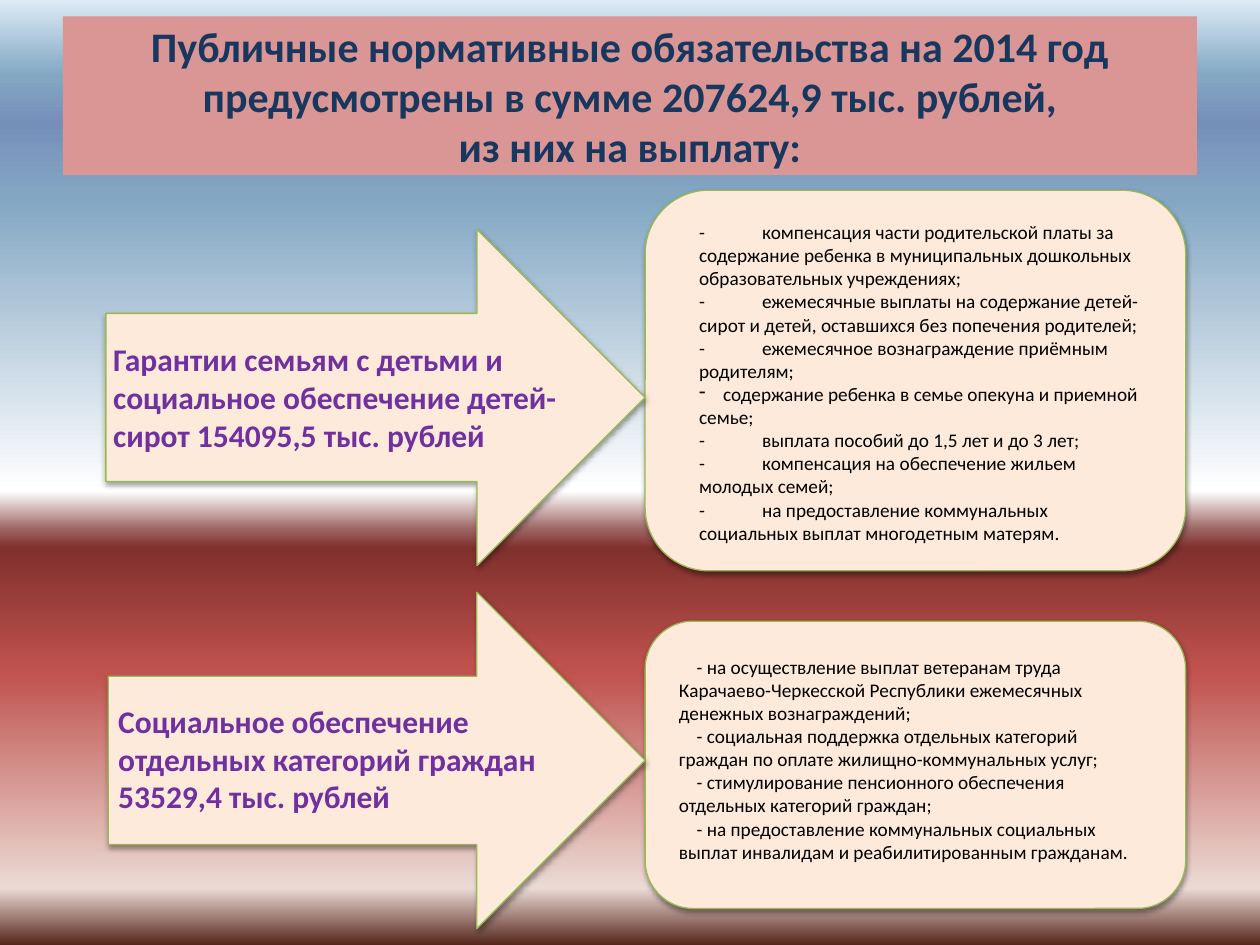
from lxml import etree
from pptx import Presentation
from pptx.dml.color import RGBColor
from pptx.enum.shapes import MSO_SHAPE
from pptx.enum.text import MSO_ANCHOR, PP_ALIGN
from pptx.oxml.ns import qn
from pptx.util import Inches, Pt

RECTANGLE = MSO_SHAPE.RECTANGLE
CARD = MSO_SHAPE.ROUNDED_RECTANGLE
ARROW = MSO_SHAPE.RIGHT_ARROW
LEFT, CENTER = PP_ALIGN.LEFT, PP_ALIGN.CENTER
TOP, MIDDLE = MSO_ANCHOR.TOP, MSO_ANCHOR.MIDDLE

TITLE = ("Публичные нормативные обязательства на 2014 год предусмотрены "
         "в сумме 207624,9 тыс. рублей,\vиз них на выплату:")

# Text areas are (left, top, width, height) in inches.
GROUPS = [
    {
        "arrow": (0.84, 1.82),
        "label": ["Гарантии семьям с детьми и социальное обеспечение "
                  "детей-сирот 154095,5 тыс. рублей"],
        "label_area": (0.8, 2.65, 3.87, 1.01),
        "card": (1.51, 3.02),
        "items": [
            "-\tкомпенсация части родительской платы за содержание ребенка "
            "в муниципальных дошкольных образовательных учреждениях;",
            "-\tежемесячные выплаты на содержание детей-сирот и детей, "
            "оставшихся без попечения родителей;",
            "-\tежемесячное вознаграждение приёмным родителям;",
            {"bullet": "содержание ребенка в семье опекуна и приемной"},
            "семье;",
            "-\tвыплата пособий до 1,5 лет и до 3 лет;",
            "-\tкомпенсация на обеспечение жильем молодых семей;",
            "-\tна предоставление коммунальных социальных выплат "
            "многодетным матерям.",
        ],
        "items_area": (5.45, 1.7, 3.72, 2.69),
        "first_line": 0,
    },
    {
        "arrow": (0.86, 4.7),
        "label": ["Социальное обеспечение отдельных категорий граждан",
                  "53529,4 тыс. рублей"],
        "label_area": (0.84, 5.52, 3.83, 1.01),
        "card": (4.93, 2.28),
        "items": [
            "- на осуществление выплат ветеранам труда Карачаево-Черкесской "
            "Республики ежемесячных денежных вознаграждений;",
            "- социальная поддержка отдельных категорий граждан по оплате "
            "жилищно-коммунальных услуг;",
            "- стимулирование пенсионного обеспечения отдельных категорий "
            "граждан;",
            "- на предоставление коммунальных социальных выплат инвалидам "
            "и реабилитированным гражданам.",
        ],
        "items_area": (5.29, 5.15, 3.94, 1.77),
        "first_line": 0.14,
    },
]

THEME = {
    "font": "Calibri",
    "title_size": 24, "label_size": 18, "item_size": 11,
    "title": "17375E", "label": "7030A0", "item": "000000",
    "banner": "D99694", "panel": "FDEADA", "outline": "98B955",
    "shadow": "000000",
    "background": [(0, "DCEBF5"), (8, "83A7C3"), (13, "768FB9"),
                   (21, "83A7C3"), (52, "FFFFFF"), (56, "9C6563"),
                   (58, "80302D"), (71, "C0524E"), (94, "EBDAD4"),
                   (100, "55261C")],
}
WIDTH, HEIGHT = 10, 7.5
MARGIN = WIDTH * 0.05
CARD_LEFT, CARD_WIDTH = 5.12, 4.29
ARROW_HEIGHT = 2.67
DASH_TAB, BULLET_INDENT = 0.12, 0.19


def color(code):
    return RGBColor.from_string(code)


def add_node(parent, tag, **attributes):
    node = etree.SubElement(parent, qn(tag))
    for name, value in attributes.items():
        node.set(name, str(value))
    return node


def paint_background(page):
    page.background.fill.gradient()
    gradient = next(page.background._cSld.iter(qn("a:gradFill")))
    for child in list(gradient):
        gradient.remove(child)
    stops = add_node(gradient, "a:gsLst")
    for percent, code in THEME["background"]:
        stop = add_node(stops, "a:gs", pos=percent * 1000)
        add_node(stop, "a:srgbClr", val=code)
    add_node(gradient, "a:lin", ang=90 * 60000, scaled=0)


def add_panel(page, kind, area, fill, outlined=True):
    """Add a filled shape; an outlined one also casts a soft shadow downwards."""
    shape = page.shapes.add_shape(kind, *map(Inches, area))
    shape.shadow.inherit = False
    shape.fill.solid()
    shape.fill.fore_color.rgb = color(fill)
    if not outlined:
        shape.line.fill.background()
        return shape
    shape.line.color.rgb = color(THEME["outline"])
    shape.line.width = Pt(0.75)
    effects = shape._element.spPr.find(qn("a:effectLst"))
    shadow = add_node(effects, "a:outerShdw", blurRad=Pt(3.1), dist=Pt(1.6),
                      dir=90 * 60000, rotWithShape=0)
    tint = add_node(shadow, "a:srgbClr", val=THEME["shadow"])
    add_node(tint, "a:alpha", val=38000)
    return shape


def set_indents(para, text, bulleted, first_line):
    properties = para._p.get_or_add_pPr()
    if bulleted:
        properties.set("marL", str(Inches(BULLET_INDENT)))
        properties.set("indent", str(-Inches(BULLET_INDENT)))
        add_node(properties, "a:buChar", char="-")
        return
    properties.set("marL", "0")
    properties.set("indent", str(Inches(first_line)))
    add_node(properties, "a:buNone")
    if "\t" in text:
        tabs = add_node(properties, "a:tabLst")
        add_node(tabs, "a:tab", pos=Inches(DASH_TAB), algn="l")


def write(box, lines, role, bold=False, align=LEFT, anchor=TOP, first_line=0):
    frame = box.text_frame
    frame.word_wrap = True
    frame.vertical_anchor = anchor
    for index, line in enumerate(lines):
        para = frame.paragraphs[0] if index == 0 else frame.add_paragraph()
        bulleted = isinstance(line, dict)
        text = line["bullet"] if bulleted else line
        set_indents(para, text, bulleted, first_line)
        para.alignment = align
        for number, part in enumerate(text.split("\v")):
            if number:
                para.add_line_break()
            span = para.add_run()
            span.text = part
            span.font.name = THEME["font"]
            span.font.size = Pt(THEME[role + "_size"])
            span.font.bold = bold
            span.font.color.rgb = color(THEME[role])


def add_text(page, area, lines, role, **style):
    write(page.shapes.add_textbox(*map(Inches, area)), lines, role, **style)


def add_group(page, group):
    top, height = group["card"]
    add_panel(page, CARD, (CARD_LEFT, top, CARD_WIDTH, height), THEME["panel"])
    left, top = group["arrow"]
    add_panel(page, ARROW, (left, top, CARD_LEFT - left, ARROW_HEIGHT),
              THEME["panel"])
    add_text(page, group["items_area"], group["items"], "item",
             first_line=group["first_line"])
    add_text(page, group["label_area"], group["label"], "label", bold=True)


def main():
    deck = Presentation()
    deck.slide_width, deck.slide_height = Inches(WIDTH), Inches(HEIGHT)
    page = deck.slides.add_slide(deck.slide_layouts[6])
    paint_background(page)
    banner = add_panel(page, RECTANGLE, (MARGIN, 0.13, WIDTH - 2 * MARGIN, 1.26),
                       THEME["banner"], outlined=False)
    write(banner, [TITLE], "title", bold=True, align=CENTER, anchor=MIDDLE)
    for group in GROUPS:
        add_group(page, group)
    deck.save("out.pptx")


if __name__ == "__main__":
    main()
